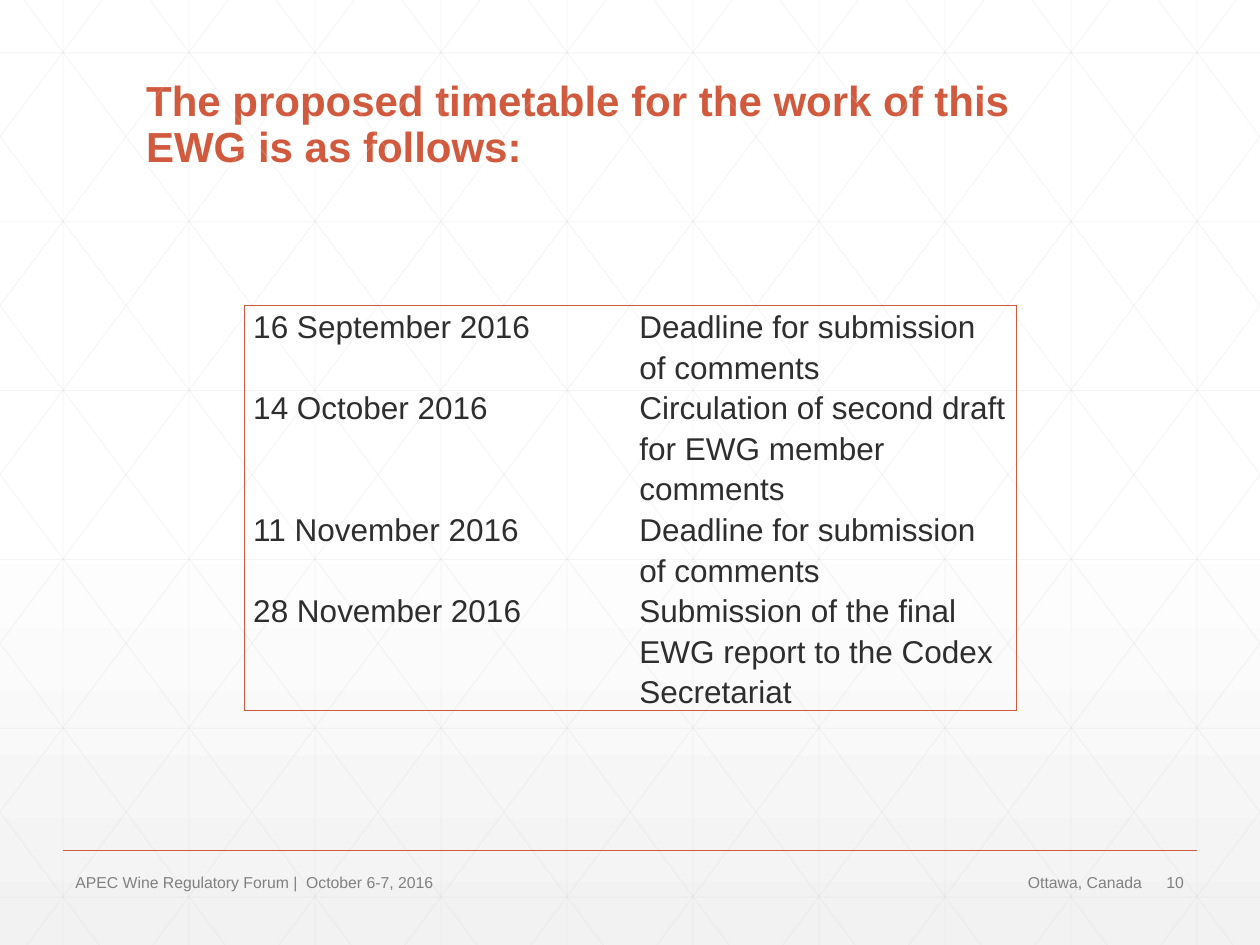
"""Build the slide with the proposed timetable of the working group."""
from copy import deepcopy

from lxml.etree import SubElement
from pptx import Presentation
from pptx.dml.color import RGBColor
from pptx.enum.shapes import MSO_CONNECTOR
from pptx.enum.text import MSO_ANCHOR, PP_ALIGN
from pptx.oxml.ns import qn
from pptx.util import Inches, Pt

COLORS = {
    "accent": "D15A3E",
    "text": "2D2E2D",
    "muted": "808080",
    "grid": "D9D9D9",
    "white": "FFFFFF",
    "shade": "F2F2F2",
}
FONT = "Arial"
WIDTH, HEIGHT = 10, 7.5
SLOPE = 1.34

TIMETABLE = [
    ("16 September 2016", "Deadline for submission of comments", 2),
    ("14 October 2016", "Circulation of second draft for EWG member comments", 3),
    ("11 November 2016", "Deadline for submission of comments", 2),
    ("28 November 2016", "Submission of the final EWG report to the Codex Secretariat", 3),
]
FOOTER = [
    ("10", 9.16, 0.34, PP_ALIGN.LEFT),
    ("APEC Wine Regulatory Forum |  October 6-7, 2016", 0.5, 5.03, PP_ALIGN.LEFT),
    ("Ottawa, Canada", 5.58, 3.58, PP_ALIGN.RIGHT),
]


class SlideBuilder:
    def __init__(self, slide):
        self.slide = slide

    def font(self, p, size, color, bold=False):
        p.font.name = FONT
        p.font.size = Pt(size)
        p.font.bold = bold
        p.font.color.rgb = RGBColor.from_string(COLORS[color])

    def background(self, stops):
        fill = self.slide.background.fill
        fill.gradient()
        fill.gradient_angle = 270
        first = self.slide.element.xpath(".//p:bg//a:gs")[0]
        for _ in stops[2:]:
            first.addnext(deepcopy(first))
        for stop, (position, color) in zip(fill.gradient_stops, stops):
            stop.position = position
            stop.color.rgb = RGBColor.from_string(COLORS[color])

    def line(self, x1, y1, x2, y2, color, width, alpha=None):
        ends = [Inches(v) for v in (x1, y1, x2, y2)]
        sp = self.slide.shapes.add_connector(MSO_CONNECTOR.STRAIGHT, *ends)
        sp.line.width = Pt(width)
        sp.line.color.rgb = RGBColor.from_string(COLORS[color])
        sp_pr = sp._element.spPr
        if alpha is not None:
            clr = sp_pr.find(".//" + qn("a:srgbClr"))
            SubElement(clr, qn("a:alpha"), val=str(alpha * 1000))
        SubElement(sp_pr, qn("a:effectLst"))

    def grid_line(self, x1, y1, x2, y2):
        self.line(x1, y1, x2, y2, "grid", 0.5, alpha=25)

    def grid(self):
        for i in range(WIDTH):
            self.grid_line(i + 0.5, 0, i + 0.5, HEIGHT)
        for i in range(6):
            y = 0.42 + i * SLOPE
            self.grid_line(0, y, WIDTH, y)
        for i in range(-5, WIDTH):
            start = i + 0.19
            x1 = max(start, 0)
            x2 = min(start + HEIGHT / SLOPE, WIDTH)
            y1, y2 = (x1 - start) * SLOPE, (x2 - start) * SLOPE
            self.grid_line(x1, y1, x2, y2)
            self.grid_line(WIDTH - x1, y1, WIDTH - x2, y2)

    def title(self, text, x, y, w, h):
        sp = self.slide.shapes.title
        sp.left, sp.top, sp.width, sp.height = (Inches(v) for v in (x, y, w, h))
        tf = sp.text_frame
        tf.text = text
        tf.word_wrap = True
        tf.vertical_anchor = MSO_ANCHOR.BOTTOM
        tf.margin_bottom = Inches(0.44)
        p = tf.paragraphs[0]
        p.alignment = PP_ALIGN.LEFT
        p.line_spacing = 0.9
        self.font(p, 24, "accent", bold=True)

    def text(self, text, x, y, w, h, align):
        sp = self.slide.shapes.add_textbox(Inches(x), Inches(y), Inches(w), Inches(h))
        tf = sp.text_frame
        tf.word_wrap = True
        tf.vertical_anchor = MSO_ANCHOR.MIDDLE
        p = tf.paragraphs[0]
        p.text = text
        p.alignment = align
        self.font(p, 9, "muted")

    def borders(self, cell, sides):
        tc_pr = cell._tc.get_or_add_tcPr()
        for side, shown in sides.items():
            ln = SubElement(tc_pr, qn("a:ln" + side), w=str(Pt(0.5)))
            if shown:
                fill = SubElement(ln, qn("a:solidFill"))
                SubElement(fill, qn("a:srgbClr"), val=COLORS["accent"])
            else:
                SubElement(ln, qn("a:noFill"))

    def cell(self, cell, text):
        cell.fill.background()
        cell.margin_left = cell.margin_right = Inches(0.07)
        cell.margin_top = cell.margin_bottom = 0
        p = cell.text_frame.paragraphs[0]
        p.text = text
        p.line_spacing = 1.15
        self.font(p, 18, "text")

    def table(self, rows, x, y, w, line_height):
        h = line_height * sum(lines for *_, lines in rows)
        frame = self.slide.shapes.add_table(
            len(rows), 2, Inches(x), Inches(y), Inches(w), Inches(h))
        table = frame.table
        table.first_row = table.horz_banding = False
        for i, (*texts, lines) in enumerate(rows):
            table.rows[i].height = Inches(line_height * lines)
            for j, text in enumerate(texts):
                cell = table.cell(i, j)
                self.borders(cell, {"L": j == 0, "R": j == 1,
                                    "T": i == 0, "B": i == len(rows) - 1})
                self.cell(cell, text)


def main():
    prs = Presentation()
    prs.slide_width, prs.slide_height = Inches(WIDTH), Inches(HEIGHT)
    s = SlideBuilder(prs.slides.add_slide(prs.slide_layouts[5]))
    s.background([(0, "white"), (0.53, "white"), (1, "shade")])
    s.grid()
    s.line(0.5, 6.75, 9.5, 6.75, "accent", 1)
    s.title("The proposed timetable for the work of this EWG is as follows:",
            1.06, 0.55, 7.88, 1.25)
    s.table(TIMETABLE, 1.94, 2.42, 6.13, 0.32)
    for text, x, w, align in FOOTER:
        s.text(text, x, 6.88, w, 0.24, align)
    prs.save("out.pptx")


if __name__ == "__main__":
    main()
